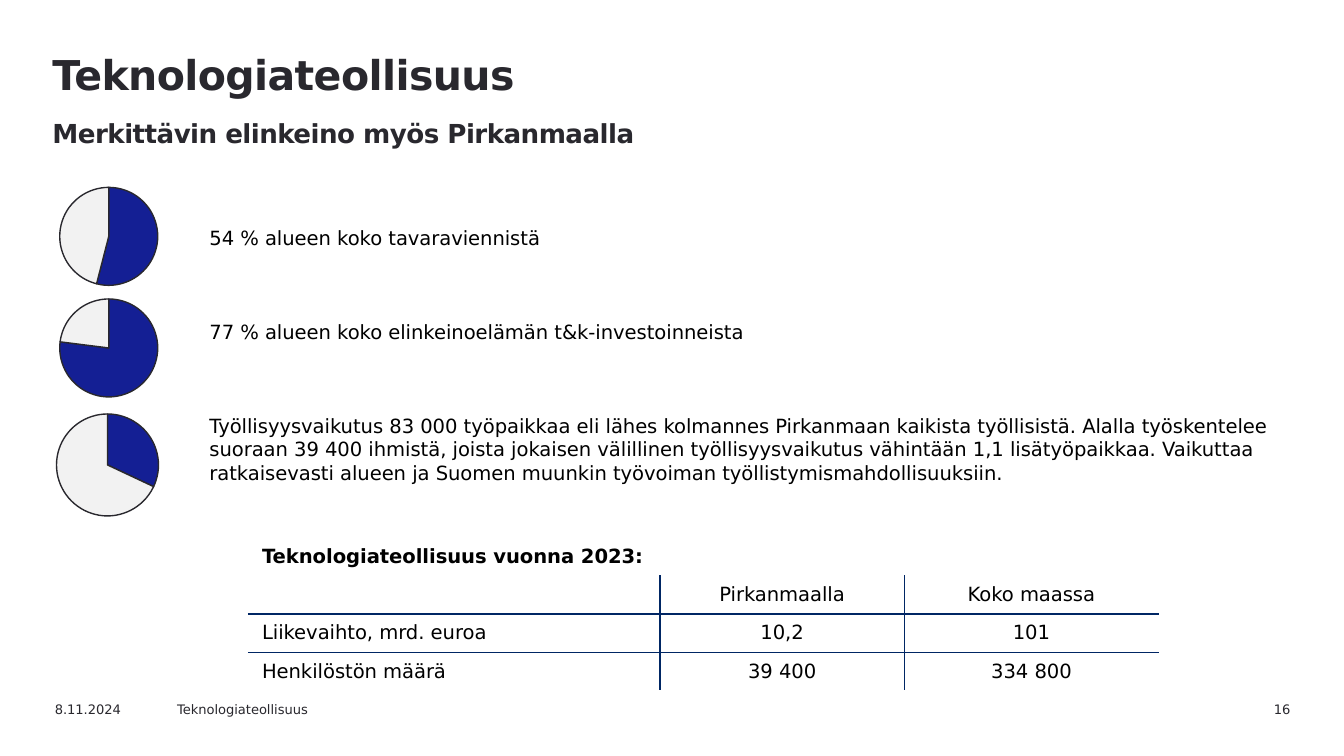
from lxml import etree
from pptx import Presentation
from pptx.chart.data import CategoryChartData
from pptx.dml.color import RGBColor
from pptx.enum.chart import XL_CHART_TYPE
from pptx.enum.text import MSO_ANCHOR, MSO_AUTO_SIZE, PP_ALIGN
from pptx.oxml import parse_xml
from pptx.oxml.ns import nsdecls, qn
from pptx.util import Inches, Pt

PIE = XL_CHART_TYPE.PIE
LEFT, CENTER, RIGHT = PP_ALIGN.LEFT, PP_ALIGN.CENTER, PP_ALIGN.RIGHT
TOP, MIDDLE = MSO_ANCHOR.TOP, MSO_ANCHOR.MIDDLE

FONT = "DejaVu Sans"
DARK = RGBColor(0x29, 0x28, 0x2E)
BLACK = RGBColor(0x00, 0x00, 0x00)
BLUE = RGBColor(0x14, 0x1F, 0x94)
PALE = RGBColor(0xF2, 0xF2, 0xF2)
NAVY = RGBColor(0x00, 0x26, 0x64)

PIE_SHARE = 0.73  # pie diameter as a share of its chart frame

FACTS = [
    "54 % alueen koko tavaraviennistä",
    "77 % alueen koko elinkeinoelämän t&k-investoinneista",
    "Työllisyysvaikutus 83 000 työpaikkaa eli lähes kolmannes Pirkanmaan "
    "kaikista työllisistä. Alalla työskentelee suoraan 39 400 ihmistä, joista "
    "jokaisen välillinen työllisyysvaikutus vähintään 1,1 lisätyöpaikkaa. "
    "Vaikuttaa ratkaisevasti alueen ja Suomen muunkin työvoiman "
    "työllistymismahdollisuuksiin.",
]
PIES = [  # left, top, size, percent
    (0.31, 1.26, 1, 54),
    (0.31, 2.09, 1, 77),
    (0.28, 2.94, 1.04, 32),
]
ROWS = [
    ["Teknologiateollisuus vuonna 2023:", "", ""],
    ["", "Pirkanmaalla", "Koko maassa"],
    ["Liikevaihto, mrd. euroa", "10,2", "101"],
    ["Henkilöstön määrä", "39 400", "334 800"],
]
COL_WIDTHS = [3.06, 1.82, 1.89]


def write(p, text, size=10.5, color=BLACK, bold=False, align=LEFT):
    p.alignment = align
    p.font.size = Pt(size)
    r = p.add_run()
    r.text = text
    r.font.name = FONT
    r.font.size = Pt(size)
    r.font.bold = bold
    r.font.color.rgb = color
    return r


def add_text(s, text, left, top, width, height, **style):
    tf = s.shapes.add_textbox(
        Inches(left), Inches(top), Inches(width), Inches(height)).text_frame
    tf.word_wrap = True
    write(tf.paragraphs[0], text, **style)


def fill_title(s):
    sp = s.shapes.title
    sp.left, sp.top = Inches(0.29), Inches(0.31)
    sp.width, sp.height = Inches(8.74), Inches(0.71)
    tf = sp.text_frame
    tf.auto_size = MSO_AUTO_SIZE.NONE
    tf.vertical_anchor = TOP
    tf.margin_top = Inches(0.05)
    p = tf.paragraphs[0]
    p.line_spacing = Pt(27)
    p.space_before = Pt(0)
    heading = write(p, "Teknologiateollisuus", size=22, color=DARK, bold=True)
    p.add_line_break()
    subheading = write(p, "Merkittävin elinkeino myös Pirkanmaalla",
                       size=14, color=DARK, bold=True)
    for r in (heading, subheading):
        r.font._element.set("spc", "-30")


def set_pie_size(chart):
    """Centre the pie in its frame at a fixed share of the frame size."""
    margin = (1 - PIE_SHARE) / 2
    plot_area = chart._chartSpace.chart.plotArea
    for old in plot_area.findall(qn("c:layout")):
        plot_area.remove(old)
    plot_area.insert(0, parse_xml(
        f'<c:layout {nsdecls("c")}><c:manualLayout>'
        '<c:layoutTarget val="inner"/>'
        '<c:xMode val="edge"/><c:yMode val="edge"/>'
        f'<c:x val="{margin:.3f}"/><c:y val="{margin:.3f}"/>'
        f'<c:w val="{PIE_SHARE}"/><c:h val="{PIE_SHARE}"/>'
        '</c:manualLayout></c:layout>'))


def add_pie(s, left, top, size, percent):
    data = CategoryChartData()
    data.categories = ["1", "2"]
    data.add_series("Series 1", (percent, 100 - percent))
    chart = s.shapes.add_chart(PIE, Inches(left), Inches(top),
                               Inches(size), Inches(size), data).chart
    chart.has_title = False
    chart.has_legend = False
    chart.font.name = FONT
    chart.font.size = Pt(18)
    chart.font.color.rgb = DARK
    plot = chart.plots[0]
    plot.vary_by_categories = False
    for i, color in enumerate((BLUE, PALE)):
        point = plot.series[0].points[i].format
        point.fill.solid()
        point.fill.fore_color.rgb = color
        point.line.color.rgb = DARK
        point.line.width = Pt(0.75)
    set_pie_size(chart)


def set_borders(cell, sides):
    """Draw navy lines on the given sides, a string in the order LRTB."""
    tc_pr = cell._tc.get_or_add_tcPr()
    for i, side in enumerate(sides):
        ln = etree.Element(qn(f"a:ln{side}"), w=str(Pt(1)))
        fill = etree.SubElement(ln, qn("a:solidFill"))
        etree.SubElement(fill, qn("a:srgbClr"), val=str(NAVY))
        tc_pr.insert(i, ln)


def add_figures_table(s):
    n_rows, n_cols = len(ROWS), len(COL_WIDTHS)
    height = Inches(1.14)
    table = s.shapes.add_table(n_rows, n_cols, Inches(1.85), Inches(4),
                               Inches(sum(COL_WIDTHS)), height).table
    table.first_row = table.horz_banding = False
    for col, width in zip(table.columns, COL_WIDTHS):
        col.width = Inches(width)
    for i, row in enumerate(ROWS):
        table.rows[i].height = height // n_rows
        for j, text in enumerate(row):
            cell = table.cell(i, j)
            cell.fill.background()
            cell.vertical_anchor = MIDDLE
            p = cell.text_frame.paragraphs[0]
            p.font.size = Pt(10.5)
            if text:
                write(p, text, bold=i == 0, align=CENTER if j else LEFT)
            if i > 0:
                inner = {"L": j > 0, "R": j < n_cols - 1,
                         "T": i > 1, "B": i < n_rows - 1}
                set_borders(cell, "".join(k for k in inner if inner[k]))
    table.cell(0, 0).merge(table.cell(0, n_cols - 1))


def main():
    prs = Presentation()
    prs.slide_width = Inches(10)
    prs.slide_height = prs.slide_width * 9 // 16
    s = prs.slides.add_slide(prs.slide_layouts[5])
    fill_title(s)
    for i, fact in enumerate(FACTS):
        add_text(s, fact, 1.46, 1.63 + 0.7 * i, 8.19, 0.27 if i < 2 else 0.62)
    for pie in PIES:
        add_pie(s, *pie)
    add_figures_table(s)
    for text, left, width, align in [
        ("8.11.2024", 0.31, 1, LEFT),
        ("Teknologiateollisuus", 1.22, 1.42, LEFT),
        ("16", 8.76, 0.94, RIGHT),
    ]:
        add_text(s, text, left, 5.17, width, 0.18,
                 size=7, color=DARK, align=align)
    prs.save("out.pptx")


if __name__ == "__main__":
    main()
